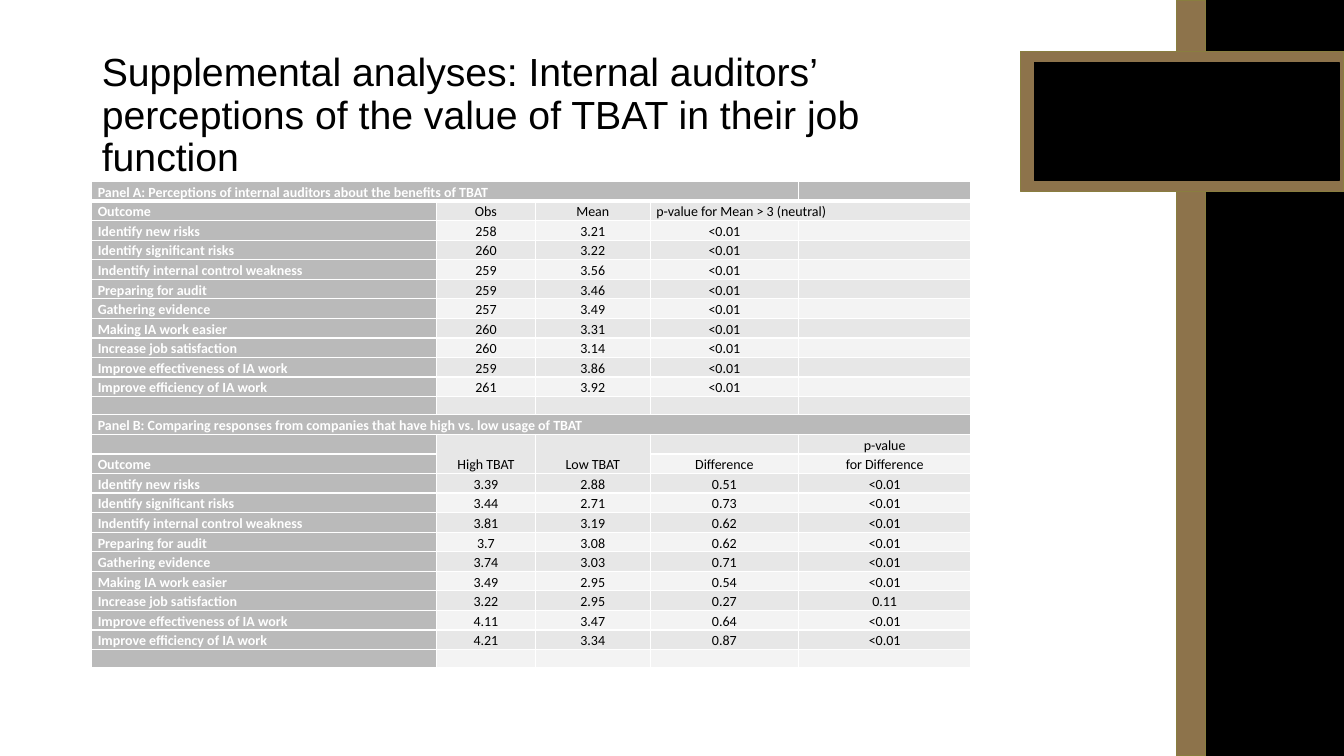
import pptx
import pptx.chart.data
import pptx.dml.color
import pptx.enum.shapes
import pptx.enum.text
import pptx.oxml
import pptx.oxml.ns
import pptx.util
from pptx.util import Inches

ALIGN = pptx.enum.text.PP_ALIGN
ANCHOR = pptx.enum.text.MSO_ANCHOR

OUTCOMES = [
    "Identify new risks",
    "Identify significant risks",
    "Indentify internal control weakness",
    "Preparing for audit",
    "Gathering evidence",
    "Making IA work easier",
    "Increase job satisfaction",
    "Improve effectiveness of IA work",
    "Improve efficiency of IA work",
]
BENEFITS = [
    ("258", "3.21"), ("260", "3.22"), ("259", "3.56"),
    ("259", "3.46"), ("257", "3.49"), ("260", "3.31"),
    ("260", "3.14"), ("259", "3.86"), ("261", "3.92"),
]
USAGE = [
    ("3.39", "2.88", "0.51", "<0.01"), ("3.44", "2.71", "0.73", "<0.01"),
    ("3.81", "3.19", "0.62", "<0.01"), ("3.7", "3.08", "0.62", "<0.01"),
    ("3.74", "3.03", "0.71", "<0.01"), ("3.49", "2.95", "0.54", "<0.01"),
    ("3.22", "2.95", "0.27", "0.11"), ("4.11", "3.47", "0.64", "<0.01"),
    ("4.21", "3.34", "0.87", "<0.01"),
]
ROWS = [
    ("Panel A: Perceptions of internal auditors about the benefits of TBAT",),
    ("Outcome", "Obs", "Mean", "p-value for Mean > 3 (neutral)"),
    *[(name, *values, "<0.01") for name, values in zip(OUTCOMES, BENEFITS)],
    (),
    ("Panel B: Comparing responses from companies that have high vs. low usage of TBAT",),
    ("", "High TBAT", "Low TBAT", "", "p-value"),
    ("Outcome", "", "", "Difference", "for Difference"),
    *[(name, *values) for name, values in zip(OUTCOMES, USAGE)],
    (),
]
PANEL_ROWS = (0, 12)
LEFT_ALIGNED = (1, 3)
# Each merge: first row, first column, last row, last column
MERGES = [(0, 0, 0, 3), (1, 3, 1, 4), (12, 0, 12, 4), (13, 1, 14, 1), (13, 2, 14, 2)]
COLUMN_WIDTHS = [3.42, 0.98, 1.14, 1.47, 1.71]
ROW_HEIGHT = 0.18


def color(value):
    return pptx.dml.color.RGBColor.from_string(value)


class AuditSlide:
    black, white, bronze, olive = "000000", "FFFFFF", "8D734B", "897E3F"
    header_fill, bands = "BABABA", ("F3F3F3", "E7E7E7")
    title_font, table_font = "Arial", "Calibri"
    title_size, table_size = 28, 10

    def __init__(self, deck):
        self.slide = deck.slides.add_slide(deck.slide_layouts[5])

    def bar(self, left, top, width, height, fill, line):
        shape = self.slide.shapes.add_shape(
            pptx.enum.shapes.MSO_SHAPE.RECTANGLE,
            Inches(left), Inches(top), Inches(width), Inches(height))
        shape.shadow.inherit = False
        shape.fill.solid()
        shape.fill.fore_color.rgb = color(fill)
        shape.line.color.rgb = color(line)
        shape.line.width = pptx.util.Pt(1)

    def title(self, text, left, top, width, height):
        box = self.slide.shapes.title
        box.left, box.top = Inches(left), Inches(top)
        box.width, box.height = Inches(width), Inches(height)
        frame = box.text_frame
        frame.text = text
        frame.word_wrap = True
        frame.auto_size = pptx.enum.text.MSO_AUTO_SIZE.NONE
        frame.vertical_anchor = ANCHOR.MIDDLE
        para = frame.paragraphs[0]
        para.alignment = ALIGN.LEFT
        para.line_spacing = 0.9
        self.style(para.runs[0].font, self.title_font, self.title_size, self.black)

    def style(self, font, name, size, value, bold=False):
        font.name, font.size, font.bold = name, pptx.util.Pt(size), bold
        font.color.rgb = color(value)

    def table(self, left, top):
        table = self.slide.shapes.add_table(
            len(ROWS), len(COLUMN_WIDTHS), Inches(left), Inches(top),
            Inches(sum(COLUMN_WIDTHS)), Inches(ROW_HEIGHT * len(ROWS))).table
        table.first_row = table.horz_banding = False
        for column, width in zip(table.columns, COLUMN_WIDTHS):
            column.width = Inches(width)
        for r, texts in enumerate(ROWS):
            table.rows[r].height = Inches(ROW_HEIGHT)
            for c in range(len(COLUMN_WIDTHS)):
                text = texts[c] if c < len(texts) else ""
                self.cell(table.cell(r, c), r, c, text)
        for r1, c1, r2, c2 in MERGES:
            table.cell(r1, c1).merge(table.cell(r2, c2))

    def cell(self, cell, r, c, text):
        is_header = c == 0 or r in PANEL_ROWS
        cell.fill.solid()
        cell.fill.fore_color.rgb = color(self.header_fill if is_header else self.bands[r % 2])
        cell.margin_left = cell.margin_right = Inches(0.06)
        cell.margin_top = cell.margin_bottom = 0
        cell.vertical_anchor = ANCHOR.BOTTOM
        self.borders(cell, top=3 if r == 1 else 1, bottom=3 if r == 0 else 1)
        para = cell.text_frame.paragraphs[0]
        para.text = text
        para.line_spacing = 1.15
        para.alignment = ALIGN.LEFT if c == 0 or (r, c) == LEFT_ALIGNED else ALIGN.CENTER
        for span in para.runs:
            self.style(span.font, self.table_font, self.table_size,
                       self.white if is_header else self.black, is_header)
        if not text:
            self.empty_size(para)

    def empty_size(self, para):
        """Keep a row with no text as low as the others."""
        end = para._p.get_or_add_endParaRPr()
        end.set("sz", str(self.table_size * 100))
        font = end.makeelement(pptx.oxml.ns.qn("a:latin"), {"typeface": self.table_font})
        end.append(font)

    def borders(self, cell, top, bottom):
        properties = cell._tc.get_or_add_tcPr()
        widths = {"lnL": 1, "lnR": 1, "lnT": top, "lnB": bottom}
        for position, (side, width) in enumerate(widths.items()):
            line = pptx.oxml.parse_xml(
                f'<a:{side} {pptx.oxml.ns.nsdecls("a")} w="{pptx.util.Pt(width)}">'
                f'<a:solidFill><a:srgbClr val="{self.white}"/></a:solidFill></a:{side}>')
            properties.insert(position, line)


def main():
    deck = pptx.Presentation()
    deck.slide_width, deck.slide_height = Inches(13.33), Inches(7.5)
    page = AuditSlide(deck)
    page.bar(11.67, 0, 0.29, 7.5, page.bronze, page.olive)
    page.bar(11.97, 0, 1.36, 7.5, page.black, page.black)
    page.bar(10.12, 0.51, 3.21, 1.39, page.bronze, page.olive)
    page.bar(10.26, 0.62, 3.02, 1.17, page.black, page.black)
    page.title("Supplemental analyses: Internal auditors’ perceptions of the value "
               "of TBAT in their job function", 0.91, 0.43, 9.1, 1.45)
    page.table(0.91, 1.8)
    deck.save("out.pptx")


if __name__ == "__main__":
    main()
